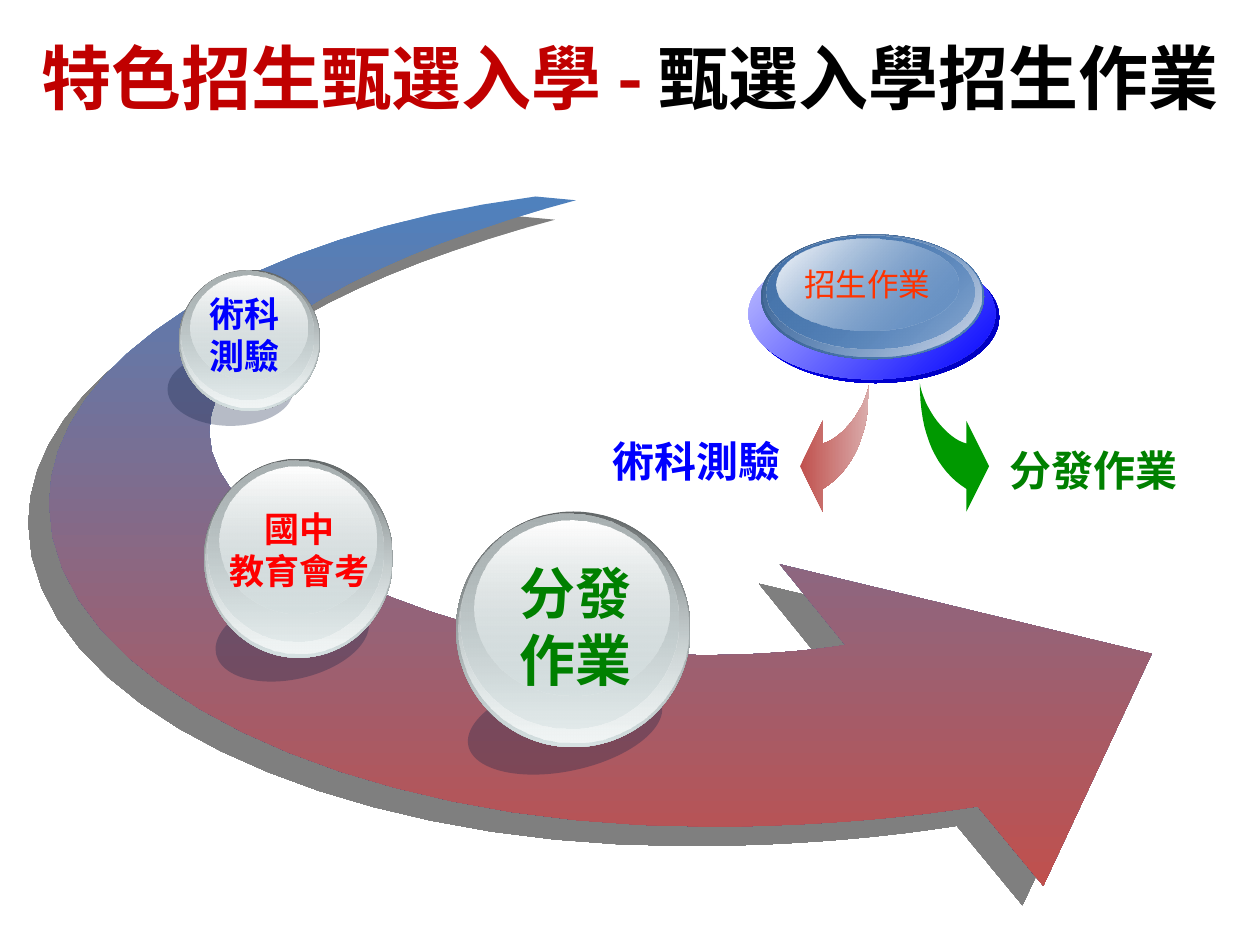
from dataclasses import dataclass

from lxml.etree import SubElement
from pptx import Presentation
from pptx.dml.color import RGBColor
from pptx.enum.shapes import MSO_SHAPE as Preset
from pptx.enum.text import MSO_ANCHOR as Anchor, PP_ALIGN as Align
from pptx.oxml.ns import qn
from pptx.util import Cm, Pt


@dataclass(frozen=True)
class Theme:
    font: str = "Noto Sans CJK SC"
    title_red: str = "C00000"
    black: str = "000000"
    blue: str = "0000FF"
    red: str = "FF0000"
    green: str = "008000"
    orange: str = "FF3300"
    leaf: str = "009900"
    shade: str = "0F2145"
    steel: str = "4F81BD"
    brick: str = "C0504D"
    pink: str = "DAADAC"
    silver: str = "D6E1E2"
    white: str = "FFFFFF"
    title_size: int = 40
    big_size: int = 32
    label_size: int = 24
    orb_size: int = 20
    button_size: int = 18


THEME = Theme()
INCH = 2.54
GRID = 1000
CURVE_STEPS = 16

TITLE_BOX = (0, 0.02, 10, 1.17)
TITLE = [("特色招生甄選入學 - ", THEME.title_red), ("甄選入學招生作業", THEME.black)]

ORBS = [
    {"body": (3.62, 4.06, 1.86, 1.87), "shade": (3.7, 5.39, 1.57, 0.73), "turn": -12.1,
     "lines": ["分發", "作業"], "box": (3.98, 4.38, 1.17, 1.18),
     "size": THEME.big_size, "color": THEME.green},
    {"body": (1.62, 3.64, 1.5, 1.58), "shade": (1.7, 4.72, 1.24, 0.67), "turn": -12.9,
     "lines": ["國中", "教育會考"], "box": (1.72, 3.98, 1.32, 0.77),
     "size": THEME.orb_size, "color": THEME.red},
    {"body": (1.42, 2.14, 1.12, 1.12), "shade": (1.33, 2.8, 1, 0.58), "turn": 0,
     "lines": ["術科", "測驗"], "box": (1.56, 2.27, 0.76, 0.77),
     "size": THEME.orb_size, "color": THEME.blue},
]
ORB_LAYERS = {
    "rim": ((0, 0, 1, 1), [("636869", 100), (THEME.silver, 100)]),
    "glow": ((0.01, 0.01, 0.98, 0.97), [(THEME.silver, 0), ("F1F5F5", 100)]),
    "face": ((0.02, 0.01, 0.93, 0.91), [("AAB2B3", 100), (THEME.silver, 48)]),
    "shine": ((0.08, 0.04, 0.83, 0.74), [(THEME.white, 100), (THEME.silver, 38)]),
}

BUTTON_TEXT = "招生作業"
BUTTON_LAYERS = {
    "base edge": ((5.97, 2, 1.96, 1.04), [(THEME.blue, 100), ("0000BA", 100)]),
    "base": ((5.94, 1.97, 1.96, 1.04), [("C6C6FF", 100), (THEME.blue, 100)]),
    "rim": ((6.04, 1.86, 1.77, 0.99), [("395C87", 100), (THEME.steel, 100)]),
    "glow": ((6.06, 1.86, 1.73, 0.97), [(THEME.steel, 0), ("D7DEEB", 100)]),
    "face": ((6.08, 1.87, 1.65, 0.9), [("4775AB", 100), (THEME.steel, 48)]),
    "shine": ((6.16, 1.89, 1.45, 0.73), [(THEME.white, 100), (THEME.steel, 38)]),
}

BRANCH_LABELS = [
    ("術科測驗", (4.54, 3.36, 1.97, 0.59), THEME.blue),
    ("分發作業", (7.69, 3.43, 1.97, 0.59), THEME.green),
]
MIRROR_AXIS = 7.1

SWOOSH = {
    "start": (4.25, 1.56),
    "outer top": [(1.97, 1.86), (0.39, 2.86), (0.39, 4)],
    "outer bottom": [(0.39, 5.41), (2.73, 6.56), (5.62, 6.56)],
    "outer end": [(6.34, 6.56), (7.05, 6.51), (7.76, 6.4)],
    "lower barb": [(8.28, 7.03)],
    "tip": [(9.14, 5.19)],
    "upper barb": [(6.19, 4.48)],
    "notch": [(6.71, 5.12)],
    "inner end": [(6.33, 5.18), (5.94, 5.2), (5.55, 5.2)],
    "inner bottom": [(3.5, 5.2), (1.66, 4.25), (1.66, 3.43)],
    "inner top": [(1.66, 2.65), (3.1, 1.98), (4.57, 1.59)],
}
BRANCH = {
    "start": (6.9, 3.04),
    "outer edge": [(6.9, 3.45), (6.77, 3.73), (6.53, 3.88)],
    "lower barb": [(6.53, 4.06)],
    "tip": [(6.35, 3.7)],
    "upper barb": [(6.53, 3.34)],
    "notch": [(6.53, 3.52)],
    "inner edge": [(6.69, 3.48), (6.87, 3.24), (6.9, 3.04)],
}


def lengths(box):
    return [Cm(value * INCH) for value in box]


def bezier(points, t):
    while len(points) > 1:
        points = [tuple(a + (b - a) * t for a, b in zip(start, end))
                  for start, end in zip(points, points[1:])]
    return points[0]


def trace(outline):
    start, *sides = outline.values()
    points = [start]
    for side in sides:
        controls = [points[-1], *side]
        steps = CURVE_STEPS if len(side) > 1 else 1
        points += [bezier(controls, step / steps) for step in range(1, steps + 1)]
    return points


def mirror(points):
    return [(2 * MIRROR_AXIS - x, y) for x, y in points]


def paint(shape, stops, angle=0):
    fill = shape.fill
    if len(stops) == 1:
        fill.solid()
        fill.fore_color.rgb = RGBColor.from_string(stops[0][0])
    else:
        fill.gradient()
        fill.gradient_angle = -angle % 360
        for stop, (color, _) in zip(fill.gradient_stops, stops):
            stop.color.rgb = RGBColor.from_string(color)
    colors = list(shape._element.spPr.iter(qn("a:srgbClr")))
    for element, (_, opacity) in zip(colors, stops):
        if opacity < 100:
            SubElement(element, qn("a:alpha"), val=str(opacity * 1000))
    shape.line.fill.background()
    shape.shadow.inherit = False


def add_ellipse(shapes, box, stops, angle=0):
    shape = shapes.add_shape(Preset.OVAL, *lengths(box))
    paint(shape, stops, angle)
    return shape


def add_outline(shapes, points, stops, angle=0):
    grid = [(round(x * GRID), round(y * GRID)) for x, y in points]
    builder = shapes.build_freeform(*grid[0], scale=Cm(INCH) / GRID)
    builder.add_line_segments(grid[1:], close=True)
    shape = builder.convert_to_shape()
    paint(shape, stops, angle)
    return shape


def write(shape, paragraphs, size, bold=True, anchor=Anchor.MIDDLE, wrap=True, inset=0):
    frame = shape.text_frame
    frame.word_wrap = wrap
    frame.vertical_anchor = anchor
    frame.margin_left = frame.margin_right = Cm(inset)
    for index, runs in enumerate(paragraphs):
        paragraph = frame.add_paragraph() if index else frame.paragraphs[0]
        paragraph.alignment = Align.CENTER
        font = paragraph.font
        font.name, font.size, font.bold = THEME.font, Pt(size), bold
        properties = paragraph._p.pPr.find(qn("a:defRPr"))
        SubElement(properties, qn("a:ea"), typeface=THEME.font)
        for text, color in runs:
            run = paragraph.add_run()
            run.text = text
            run.font.color.rgb = RGBColor.from_string(color)


def add_orb(shapes, orb):
    shade = add_ellipse(shapes, orb["shade"], [(THEME.shade, 30)])
    shade.rotation = orb["turn"]
    left, top, width, height = orb["body"]
    for (x, y, w, h), stops in ORB_LAYERS.values():
        box = (left + x * width, top + y * height, w * width, h * height)
        add_ellipse(shapes, box, stops, 90)
    label = shapes.add_textbox(*lengths(orb["box"]))
    lines = [[(line, orb["color"])] for line in orb["lines"]]
    write(label, lines, orb["size"], anchor=Anchor.TOP, wrap=False, inset=0.25)


def add_swoosh(shapes):
    stops = [(THEME.steel, 100), (THEME.brick, 100)]
    swoosh = add_outline(shapes, trace(SWOOSH), stops, 90)
    effects = swoosh._element.spPr.find(qn("a:effectLst"))
    shadow = SubElement(effects, qn("a:outerShdw"), dist=str(Pt(16.3)),
                        dir=str(137 * 60000), algn="ctr", rotWithShape="0")
    color = SubElement(shadow, qn("a:srgbClr"), val=THEME.black)
    SubElement(color, qn("a:alpha"), val="50000")


def add_button(shapes):
    group = shapes.add_group_shape()
    for box, stops in BUTTON_LAYERS.values():
        layer = add_ellipse(group.shapes, box, stops, 45)
    write(layer, [[(BUTTON_TEXT, THEME.orange)]], THEME.button_size, bold=False, wrap=False)


def add_branches(shapes):
    branch = trace(BRANCH)
    add_outline(shapes, branch, [(THEME.brick, 100), (THEME.pink, 100)])
    add_outline(shapes, mirror(branch), [(THEME.leaf, 100)])
    for text, box, color in BRANCH_LABELS:
        write(shapes.add_textbox(*lengths(box)), [[(text, color)]], THEME.label_size)


def main():
    """Build the admissions process slide."""
    presentation = Presentation()
    presentation.slide_width, presentation.slide_height = lengths((10, 7.5))
    shapes = presentation.slides.add_slide(presentation.slide_layouts[6]).shapes
    write(shapes.add_textbox(*lengths(TITLE_BOX)), [TITLE], THEME.title_size)
    add_swoosh(shapes)
    for orb in ORBS:
        add_orb(shapes, orb)
    add_branches(shapes)
    add_button(shapes)
    presentation.save("out.pptx")


if __name__ == "__main__":
    main()
